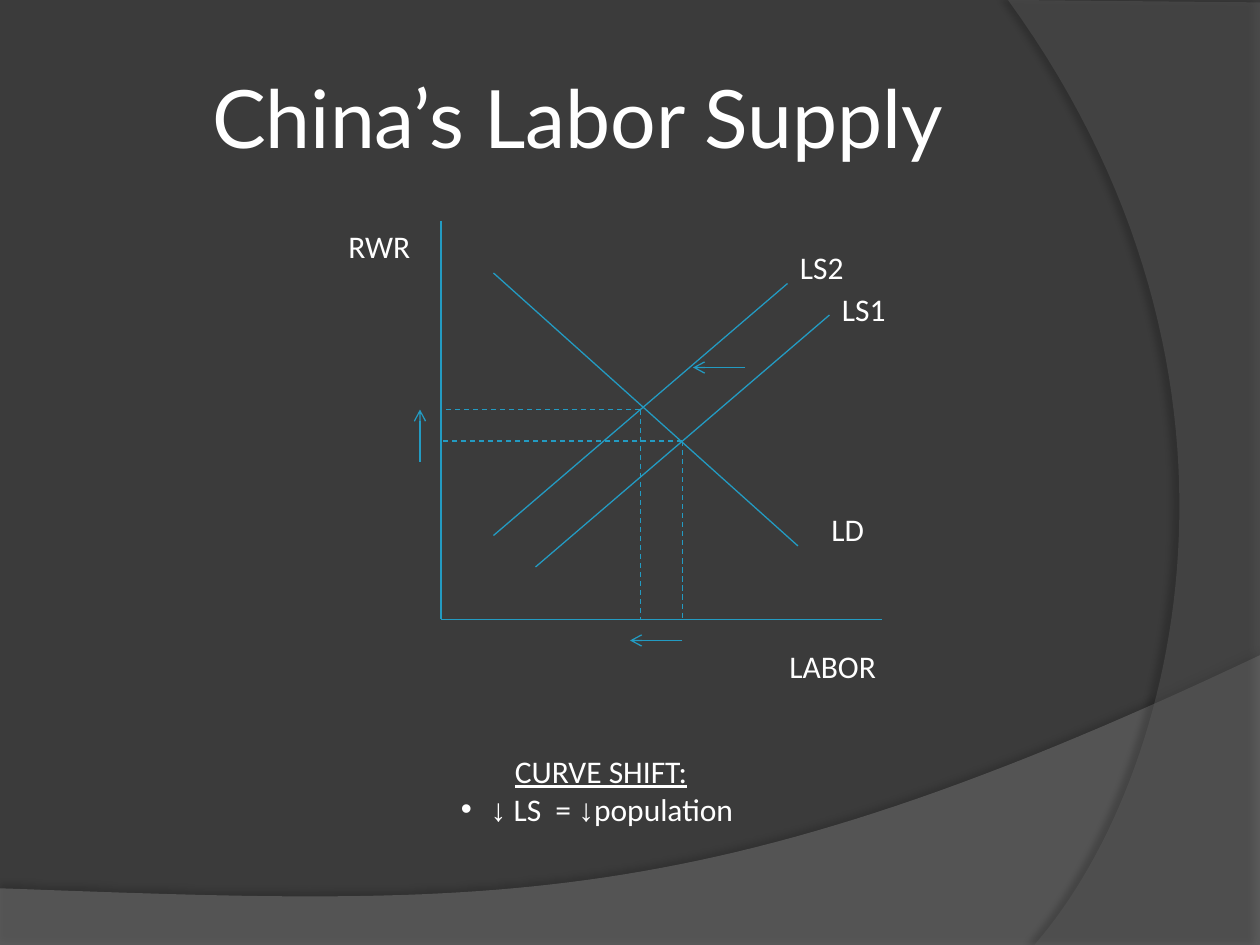
from pptx import Presentation
from pptx.dml.color import RGBColor
from pptx.enum import dml, shapes, text
from pptx.oxml import ns, xmlchemy
from pptx.util import Pt

COLORS = {
    "background": "3B3B3B",
    "wave": "7F7F7F",
    "arc": "5E5E5E",
    "shadow": "000000",
    "line": "239BC2",
    "text": "FFFFFF",
}

AXIS_X, AXIS_Y = 252, 354
SOLID_LINES = [
    (AXIS_X, 126, AXIS_X, AXIS_Y),
    (AXIS_X, AXIS_Y, 504, AXIS_Y),
    (282, 156, 456, 312),
    (282, 306, 450, 162),
    (306, 324, 474, 180),
]
EQUILIBRIA = [(366, 234), (390, 252)]
SHIFT_ARROWS = [(240, 264, 240, 234), (390, 366, 360, 366), (426, 210, 396, 210)]
LABELS = [
    ("LD", 468, 288, 37.4),
    ("LS2", 450, 138, 46.8),
    ("LS1", 474, 162, 46.8),
    ("RWR", 192, 126, 57.6),
    ("LABOR", 444, 366, 75.6),
]


def color(name):
    return RGBColor.from_string(COLORS[name])


def add_xml(parent, tag, **attributes):
    child = xmlchemy.OxmlElement(tag)
    for key, value in attributes.items():
        child.set(key, str(value))
    parent.append(child)
    return child


def curve(start, control_a, control_b, end, steps=60):
    points = []
    for step in range(steps + 1):
        t = step / steps
        weights = ((1 - t) ** 3, 3 * t * (1 - t) ** 2, 3 * t * t * (1 - t), t ** 3)
        corners = (start, control_a, control_b, end)
        points.append(tuple(sum(w * c[axis] for w, c in zip(weights, corners)) for axis in (0, 1)))
    return points


def add_backdrop(page, points, name, opacity, shadow_opacity, distance, angle):
    first, *rest = [(Pt(x), Pt(y)) for x, y in points]
    builder = page.shapes.build_freeform(*first)
    builder.add_line_segments(rest, close=True)
    shape = builder.convert_to_shape()
    shape.fill.solid()
    shape.fill.fore_color.rgb = color(name)
    shape.line.fill.background()
    fill = shape.element.spPr.find(ns.qn("a:solidFill"))
    add_xml(fill[0], "a:alpha", val=opacity * 1000)
    shape.shadow.inherit = False
    effects = shape.element.spPr.find(ns.qn("a:effectLst"))
    shadow = add_xml(effects, "a:outerShdw", blurRad=Pt(4), dist=Pt(distance),
                     dir=angle * 60000, algn="ctr", rotWithShape=0)
    tint = add_xml(shadow, "a:srgbClr", val=COLORS["shadow"])
    add_xml(tint, "a:alpha", val=shadow_opacity * 1000)


def add_line(page, x1, y1, x2, y2, dashed=False, arrow=False):
    line = page.shapes.add_connector(
        shapes.MSO_CONNECTOR.STRAIGHT, Pt(x1), Pt(y1), Pt(x2), Pt(y2))
    line.line.color.rgb = color("line")
    line.line.width = Pt(0.75)
    if dashed:
        line.line.dash_style = dml.MSO_LINE.DASH
    if arrow:
        add_xml(line.line._get_or_add_ln(), "a:tailEnd", type="arrow")
    add_xml(line.element.spPr, "a:effectLst")


def style(font, size=18, name="Calibri"):
    font.size = Pt(size)
    font.name = name
    font.color.rgb = color("text")


def add_label(page, wording, left, top, width):
    box = page.shapes.add_textbox(Pt(left), Pt(top), Pt(width), Pt(29))
    box.text_frame.word_wrap = False
    para = box.text_frame.paragraphs[0]
    para.text = wording
    style(para.font)


def add_title(page, wording):
    title = page.shapes.title
    title.left, title.top, title.width, title.height = Pt(36), Pt(21.6), Pt(588), Pt(90)
    frame = title.text_frame
    frame.margin_left = frame.margin_right = Pt(3.6)
    frame.vertical_anchor = text.MSO_ANCHOR.MIDDLE
    para = frame.paragraphs[0]
    para.text = wording
    para.alignment = text.PP_ALIGN.CENTER
    style(para.font, 46, "Lato")


def add_curve_shift(page):
    box = page.shapes.add_textbox(Pt(256.3), Pt(426.2), Pt(174.2), Pt(51))
    frame = box.text_frame
    frame.word_wrap = False
    heading = frame.paragraphs[0]
    heading.text = "CURVE SHIFT:"
    heading.alignment = text.PP_ALIGN.CENTER
    style(heading.font)
    heading.font.underline = True

    para = frame.add_paragraph()
    para.alignment = text.PP_ALIGN.LEFT
    properties = para._p.get_or_add_pPr()
    properties.set("marL", str(Pt(17)))
    properties.set("indent", str(-Pt(17)))
    add_xml(properties, "a:buFont", typeface="Arial")
    add_xml(properties, "a:buChar", char="•")
    style(para.font)
    for wording, font_name in (("↓", "Arial"), (" LS  = ", "Calibri"),
                               ("↓", "Arial"), ("population", "Calibri")):
        span = para.add_run()
        span.text = wording
        span.font.name = font_name


def main():
    deck = Presentation()
    deck.slide_width, deck.slide_height = Pt(720), Pt(540)
    page = deck.slides.add_slide(deck.slide_layouts[5])
    page.background.fill.solid()
    page.background.fill.fore_color.rgb = color("background")

    wave = curve((720, 374.4), (402.5, 524.9), (281.5, 517.7), (0, 507.6))
    add_backdrop(page, [(0, 540.7), (720, 540.7)] + wave, "wave", 45, 35, 3.5, 270)
    arc = curve((591.1, 540), (673.2, 445.7), (733, 216), (576, 0))
    add_backdrop(page, [(720, 1.4), (720, 540)] + arc, "arc", 40, 45, 4, 180)

    add_title(page, "China’s Labor Supply")
    for ends in SOLID_LINES:
        add_line(page, *ends)
    for x, y in EQUILIBRIA:
        add_line(page, x, y, AXIS_X, y, dashed=True)
        add_line(page, x, y, x, AXIS_Y, dashed=True)
    for ends in SHIFT_ARROWS:
        add_line(page, *ends, arrow=True)
    for label in LABELS:
        add_label(page, *label)
    add_curve_shift(page)
    deck.save("out.pptx")


if __name__ == "__main__":
    main()
